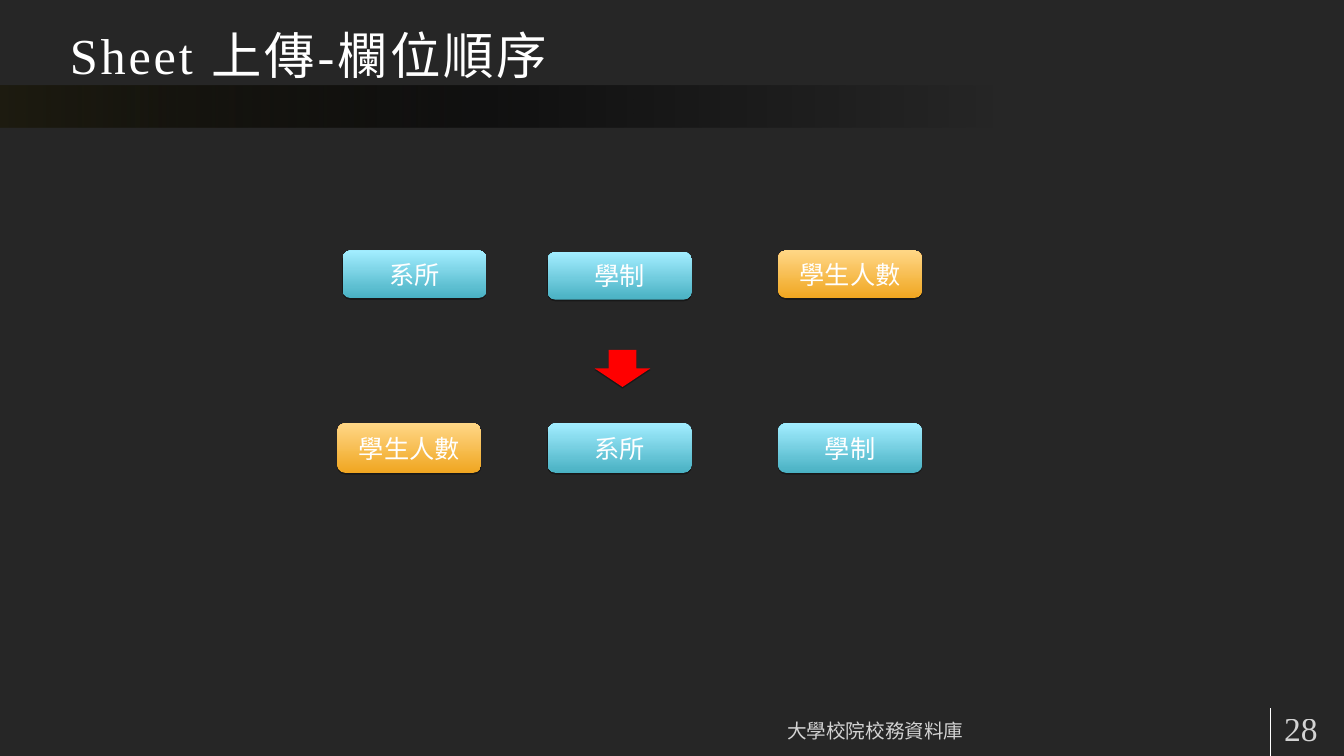
from lxml import etree
from pptx import Presentation
from pptx.dml.color import RGBColor
from pptx.enum import shapes, text
from pptx.oxml.ns import qn
from pptx.util import Cm, Pt

BACKGROUND = RGBColor(0x26, 0x26, 0x26)
WHITE = RGBColor(0xFF, 0xFF, 0xFF)
BLACK = RGBColor(0, 0, 0)
BROWN = RGBColor(0x1E, 0x1C, 0x11)
RED = RGBColor(0xFF, 0, 0)
TEAL = RGBColor(0x49, 0xB1, 0xC3)
SKY = RGBColor(0xA2, 0xED, 0xFF)
ORANGE = RGBColor(0xF0, 0xA6, 0x21)
SAND = RGBColor(0xFF, 0xD7, 0x86)

SERIF = "Times New Roman"
SANS = "Noto Sans CJK SC"
GROUP_FILL = [(0, TEAL, 100), (100, SKY, 100)]
COUNT_FILL = [(0, ORANGE, 100), (100, SAND, 100)]
FIELD_FILLS = {"系所": GROUP_FILL, "學制": GROUP_FILL, "學生人數": COUNT_FILL}


def add_color(parent, color, opacity):
    value = etree.SubElement(parent, qn("a:srgbClr"), val=str(color))
    if opacity < 100:
        etree.SubElement(value, qn("a:alpha"), val=str(opacity * 1000))


def fill_gradient(shape, stops, angle):
    shape.fill.gradient()
    shape.fill.gradient_angle = angle
    stop_list = shape._element.spPr.find(".//" + qn("a:gsLst"))
    for stop in list(stop_list):
        stop_list.remove(stop)
    for position, color, opacity in stops:
        stop = etree.SubElement(stop_list, qn("a:gs"), pos=str(position * 1000))
        add_color(stop, color, opacity)


def add_plain_shape(slide, kind, left, top, width, height):
    shape = slide.shapes.add_shape(kind, Cm(left), Cm(top), Cm(width), Cm(height))
    shape.shadow.inherit = False
    shape.line.fill.background()
    return shape


def add_shadow(shape):
    effects = shape._element.spPr.find(qn("a:effectLst"))
    shadow = etree.SubElement(effects, qn("a:outerShdw"), blurRad="0",
                              dist=str(Pt(1.8)), dir="5400000", rotWithShape="0")
    add_color(shadow, BLACK, 35)


def write_text(frame, words, size, font, align, anchor, margins, opacity=100, spacing=0):
    frame.word_wrap = True
    frame.vertical_anchor = anchor
    frame.margin_left = frame.margin_right = Cm(margins[0])
    frame.margin_top = frame.margin_bottom = Cm(margins[1])
    paragraph = frame.paragraphs[0]
    paragraph.alignment = align
    run = paragraph.add_run()
    run.text = words
    run.font.size = Pt(size)
    run.font.color.rgb = WHITE
    run.font.name = font
    properties = run.font._element
    etree.SubElement(properties, qn("a:ea"), typeface=SANS)
    if spacing:
        properties.set("spc", str(spacing * 100))
    if opacity < 100:
        color = properties.find(".//" + qn("a:srgbClr"))
        etree.SubElement(color, qn("a:alpha"), val=str(opacity * 1000))


def add_label(slide, words, left, top, width, height, size, align, anchor, **style):
    label = slide.shapes.add_textbox(Cm(left), Cm(top), Cm(width), Cm(height))
    write_text(label.text_frame, words, size, SERIF, align, anchor, (0.46, 0.23), **style)


def add_field(slide, name, left, top, height):
    field = add_plain_shape(slide, shapes.MSO_SHAPE.ROUNDED_RECTANGLE, left, top, 5.44, height)
    fill_gradient(field, FIELD_FILLS[name], 90)
    add_shadow(field)
    write_text(field.text_frame, name, 27, SANS, text.PP_ALIGN.CENTER,
               text.MSO_ANCHOR.MIDDLE, (0.18, 0.1))


def add_divider(slide, x, top, bottom):
    divider = slide.shapes.add_connector(shapes.MSO_CONNECTOR.STRAIGHT,
                                         Cm(x), Cm(top), Cm(x), Cm(bottom))
    divider.line.color.rgb = WHITE
    divider.line.width = Pt(0.75)
    etree.SubElement(divider._element.spPr, qn("a:effectLst"))


def main():
    deck = Presentation()
    deck.slide_width, deck.slide_height = Cm(50.8), Cm(28.58)
    slide = deck.slides.add_slide(deck.slide_layouts[6])
    slide.background.fill.solid()
    slide.background.fill.fore_color.rgb = BACKGROUND

    band = add_plain_shape(slide, shapes.MSO_SHAPE.RECTANGLE, 0, 3.23, 50.8, 1.6)
    fill_gradient(band, [(0, BROWN, 100), (39, BLACK, 54), (74, BLACK, 0)], 0)
    add_divider(slide, 48, 26.77, 28.58)

    left, center = text.PP_ALIGN.LEFT, text.PP_ALIGN.CENTER
    middle, bottom = text.MSO_ANCHOR.MIDDLE, text.MSO_ANCHOR.BOTTOM
    add_label(slide, "Sheet 上傳-欄位順序", 2.18, 0, 45.72, 3.43, 54, left, bottom, spacing=3)
    add_label(slide, "大學校院校務資料庫", 18.19, 26.77, 29.79, 1.52, 21, center, bottom, opacity=80)
    add_label(slide, "28", 48.08, 26.77, 2.92, 1.52, 36, left, middle, opacity=80)

    for name, x, y in [("系所", 12.95, 9.47), ("學制", 20.7, 9.53), ("學生人數", 29.41, 9.47)]:
        add_field(slide, name, x, y, 1.8)

    arrow = add_plain_shape(slide, shapes.MSO_SHAPE.DOWN_ARROW, 22.48, 13.23, 2.1, 1.4)
    arrow.fill.solid()
    arrow.fill.fore_color.rgb = RED
    add_shadow(arrow)

    for name, x in [("系所", 20.7), ("學制", 29.41), ("學生人數", 12.75)]:
        add_field(slide, name, x, 16, 1.88)

    deck.save("out.pptx")


if __name__ == "__main__":
    main()
